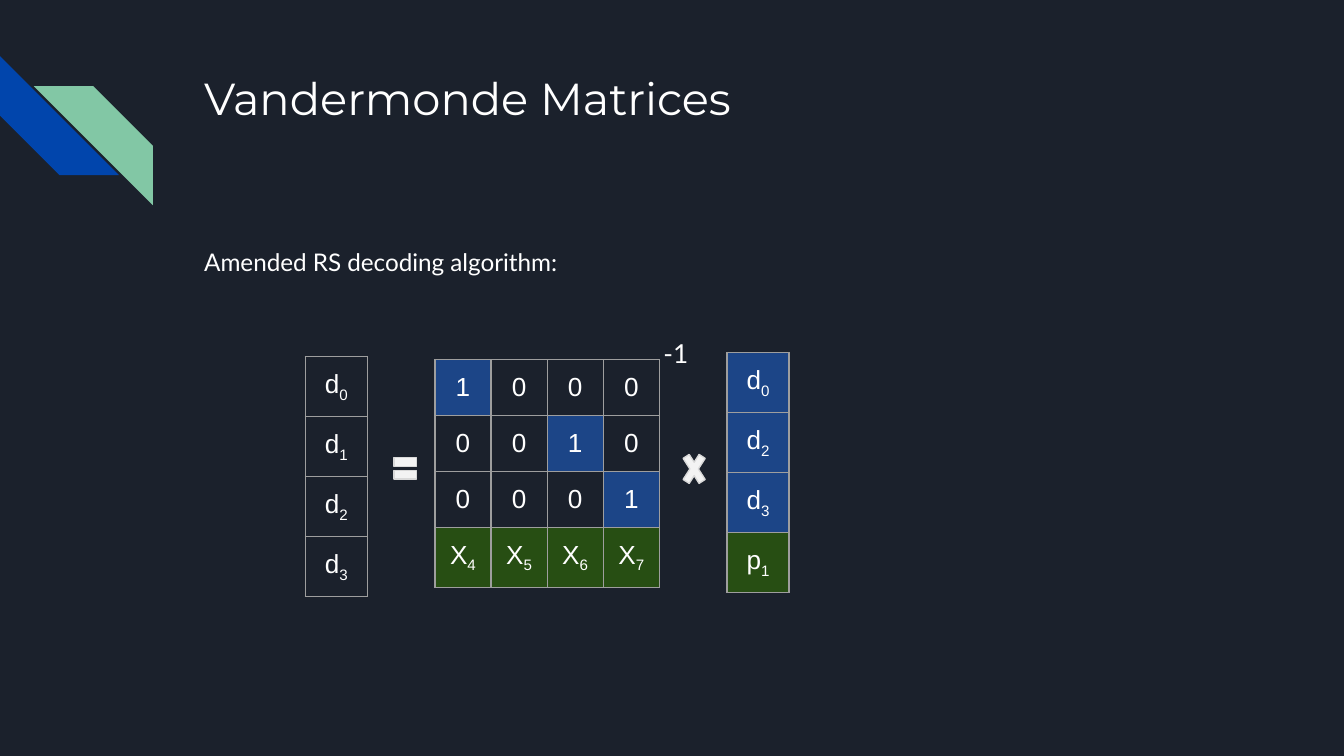
import lxml.etree
import pptx
import pptx.dml.color
import pptx.enum.shapes
import pptx.enum.text
import pptx.oxml
import pptx.oxml.ns
import pptx.util

Cm = pptx.util.Cm
Pt = pptx.util.Pt
MSO_SHAPE = pptx.enum.shapes.MSO_SHAPE
PP_ALIGN = pptx.enum.text.PP_ALIGN
qn = pptx.oxml.ns.qn

WHITE, BLUE, GREEN = "FFFFFF", "1C4587", "274E13"
ROW_HEIGHT = 0.8


def rgb(value):
    """Turn a hex string into a colour."""
    return pptx.dml.color.RGBColor.from_string(value)


def style_runs(p, font, size):
    """Give every run of a paragraph the font, size and white colour."""
    for r in p.runs:
        r.font.name = font
        r.font.size = Pt(size)
        r.font.color.rgb = rgb(WHITE)


def set_text(sp, text, font, size):
    """Write one left-aligned, top-anchored line with even insets."""
    tf = sp.text_frame
    tf.word_wrap = True
    tf.auto_size = pptx.enum.text.MSO_AUTO_SIZE.NONE
    tf.vertical_anchor = pptx.enum.text.MSO_ANCHOR.TOP
    tf.margin_left = tf.margin_right = tf.margin_top = tf.margin_bottom = Cm(0.25)
    tf.text = text
    p = tf.paragraphs[0]
    p.alignment = PP_ALIGN.LEFT
    p.space_before = Pt(0)
    style_runs(p, font, size)
    return p


def place(sp, x, y, w, h):
    """Move and size a placeholder."""
    sp.left, sp.top, sp.width, sp.height = Cm(x), Cm(y), Cm(w), Cm(h)


def add_shape(s, kind, x, y, w, h, fill, line=None):
    """Add a flat preset shape."""
    sp = s.shapes.add_shape(kind, Cm(x), Cm(y), Cm(w), Cm(h))
    sp.shadow.inherit = False
    sp.fill.solid()
    sp.fill.fore_color.rgb = rgb(fill)
    if line:
        sp.line.color.rgb = rgb(line)
        sp.line.width = Pt(0.75)
    else:
        sp.line.fill.background()
    return sp


def add_stripes(s, x, y):
    """Draw the two diagonal stripes of the corner ornament."""
    size = 2.25
    sp = add_shape(s, MSO_SHAPE.DIAGONAL_STRIPE, x, y, size, size, "0145AC")
    sp.rotation = 270
    sp = add_shape(s, MSO_SHAPE.DIAGONAL_STRIPE, x + 0.64, y + 0.57, size, size, "82C7A5")
    sp.element.spPr.find(qn("a:xfrm")).set("flipH", "1")


def add_heading(s, x, y, w):
    """Fill the title and the introductory line below it."""
    title, body = s.shapes.title, s.placeholders[1]
    place(title, x, y, w, 2.54)
    set_text(title, "Vandermonde Matrices", "Montserrat", 24)
    place(body, x, y + 3.25, w, 1.27)
    p = set_text(body, "Amended RS decoding algorithm:", "Lato", 13)
    p.line_spacing = 1.15
    p.space_after = Pt(16)
    pPr = p._p.get_or_add_pPr()
    pPr.set("marL", "0")
    pPr.set("indent", "0")
    lxml.etree.SubElement(pPr, qn("a:buNone"))


def format_cell(cell, entry, fill):
    """Write a symbol with its subscript and draw the cell's grid lines."""
    cell.margin_left = cell.margin_right = Cm(0.25)
    cell.margin_top = cell.margin_bottom = Cm(0.25)
    p = cell.text_frame.paragraphs[0]
    p.alignment = PP_ALIGN.CENTER
    p.text = entry[0]
    if entry[1:]:
        r = p.add_run()
        r.text = entry[1:]
        r._r.get_or_add_rPr().set("baseline", "-25000")
    style_runs(p, "Arial", 14)
    tcPr = cell._tc.get_or_add_tcPr()
    for side in "LRTB":
        ln = lxml.etree.SubElement(tcPr, qn(f"a:ln{side}"), w=str(Pt(0.75)))
        solid = lxml.etree.SubElement(ln, qn("a:solidFill"))
        lxml.etree.SubElement(solid, qn("a:srgbClr"), val="9E9E9E")
    if fill:
        cell.fill.solid()
        cell.fill.fore_color.rgb = rgb(fill)
    else:
        cell.fill.background()


def add_matrix(s, x, y, col_width, rows, fills):
    """Add a table of entries, coloured by a map from entry to fill."""
    n_rows, n_cols = len(rows), len(rows[0])
    frame = s.shapes.add_table(n_rows, n_cols, Cm(x), Cm(y),
                               Cm(col_width * n_cols), Cm(ROW_HEIGHT * n_rows))
    table = frame.table
    table.first_row = table.horz_banding = False
    for col in table.columns:
        col.width = Cm(col_width)
    for i, entries in enumerate(rows):
        table.rows[i].height = Cm(ROW_HEIGHT)
        for j, entry in enumerate(entries):
            format_cell(table.cell(i, j), entry, fills.get(entry[0]))


def add_equation(s, x, y):
    """Lay out data vector = inverse matrix times received vector."""
    add_matrix(s, x, y + 0.62, 1.17, [["d0"], ["d1"], ["d2"], ["d3"]], {})
    add_matrix(s, x + 7.97, y + 0.55, 1.17, [["d0"], ["d2"], ["d3"], ["p1"]],
               {"d": BLUE, "p": GREEN})
    add_shape(s, MSO_SHAPE.MATH_EQUAL, x + 1.6, y + 2.39, 0.58, 0.69, "F3F3F3", "D9D9D9")
    rows = ["1000", "0010", "0001", ["X4", "X5", "X6", "X7"]]
    add_matrix(s, x + 2.45, y + 0.68, 1.06, rows, {"1": BLUE, "X": GREEN})
    add_shape(s, MSO_SHAPE.MATH_MULTIPLY, x + 7.06, y + 2.29, 0.58, 0.91, "F3F3F3", "D9D9D9")
    exponent = s.shapes.add_textbox(Cm(x + 6.52), Cm(y), Cm(1.68), Cm(1.42))
    set_text(exponent, "-1", "Lato", 14)


def main():
    """Build and save the slide."""
    prs = pptx.Presentation()
    prs.slide_width, prs.slide_height = Cm(25.4), Cm(14.29)
    s = prs.slides.add_slide(prs.slide_layouts[1])
    s.background.fill.solid()
    s.background.fill.fore_color.rgb = rgb("1B212C")
    add_stripes(s, 0, 1.06)
    add_heading(s, 3.61, 1.09, 19.56)
    add_equation(s, 5.77, 6.12)
    prs.save("out.pptx")


if __name__ == "__main__":
    main()
